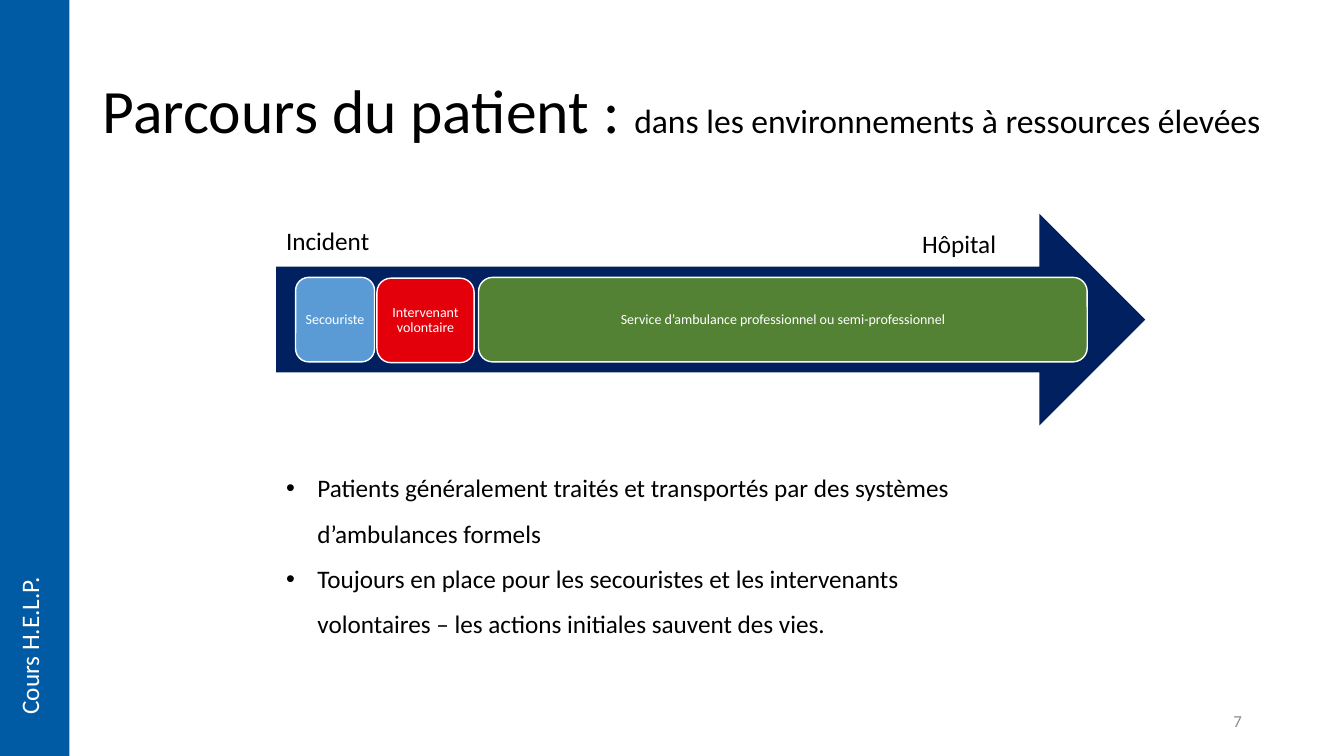
"""Build the slide on the patient pathway in high-resource settings."""
from pptx import Presentation
from pptx import util as u
from pptx.dml import color
from pptx.enum import shapes, text
from pptx.oxml import parse_xml
from pptx.oxml import ns


def add_block(kind, place, fill, line=None):
    block = page.shapes.add_shape(kind, *map(u.Cm, place))
    block.shadow.inherit = False
    block.fill.solid()
    block.fill.fore_color.rgb = color.RGBColor.from_string(fill)
    if line:
        block.line.color.rgb = color.RGBColor.from_string(line)
        block.line.width = u.Pt(1)
    else:
        block.line.fill.background()
    return block


def write(box, *paragraphs, size=18, ink="000000", align=text.PP_ALIGN.LEFT,
          anchor=text.MSO_ANCHOR.TOP, spacing=1.0, wrap=True, inset=None, bullet=False):
    frame = box.text_frame
    frame.word_wrap = wrap
    frame.vertical_anchor = anchor
    if inset is not None:
        frame.margin_left = frame.margin_right = u.Cm(inset)
        frame.margin_top = frame.margin_bottom = u.Cm(inset)
    for index, spans in enumerate(paragraphs):
        para = frame.add_paragraph() if index else frame.paragraphs[0]
        para.alignment = align
        para.line_spacing = spacing
        for words, points in ([(spans, size)] if isinstance(spans, str) else spans):
            span = para.add_run()
            span.text = words
            span.font.name = "Calibri"
            span.font.size = u.Pt(points)
            span.font.color.rgb = color.RGBColor.from_string(ink)
        if bullet:
            properties = para._p.get_or_add_pPr()
            properties.set("marL", str(u.Cm(0.79)))
            properties.set("indent", str(u.Cm(-0.79)))
            for mark in ('buFont {} typeface="Arial"', 'buChar {} char="•"'):
                properties.append(parse_xml(f"<a:{mark.format(ns.nsdecls('a'))}/>"))
    return frame


deck = Presentation()
deck.slide_width, deck.slide_height = u.Cm(33.87), u.Cm(19.05)
page = deck.slides.add_slide(deck.slide_layouts[6])
middle = text.MSO_ANCHOR.MIDDLE

add_block(shapes.MSO_SHAPE.RECTANGLE, (0, 0, 1.75, 19.05), "005BA4")
course = page.shapes.add_textbox(u.Cm(0.23), u.Cm(14.25), u.Cm(1.27), u.Cm(4.01))
course_frame = write(course, "Cours H.E.L.P.", ink="FFFFFF", wrap=False)
course_frame._txBody.bodyPr.set("vert", "vert270")

add_block(shapes.MSO_SHAPE.RIGHT_ARROW, (6.96, 5.39, 21.9, 5.33), "002060")
stages = [
    ("Secouriste", 7.45, 6.99, 1.99, "5B9BD5"),
    ("Intervenant volontaire", 9.5, 7.01, 2.45, "E3000B"),
    ("Service d’ambulance professionnel ou semi-professionnel", 12.06, 6.99, 15.34, "548235"),
]
for label, left, top, width, fill in stages:
    stage = add_block(shapes.MSO_SHAPE.ROUNDED_RECTANGLE, (left, top, width, 2.13), fill, "FFFFFF")
    write(stage, label, size=10, ink="FFFFFF", align=text.PP_ALIGN.CENTER,
          anchor=middle, spacing=0.9, inset=0.1)

title = [("Parcours du patient : ", 44), ("dans les environnements à ressources élevées", 24)]
points = [
    "Patients généralement traités et transportés par des systèmes d’ambulances formels",
    "Toujours en place pour les secouristes et les intervenants volontaires "
    "– les actions initiales sauvent des vies.",
]
captions = [
    ((2.34, 1.02, 30.71, 3.68), [title], dict(anchor=middle, spacing=0.9)),
    ((6.96, 5.64, 4.57, 1.63), ["Incident"], dict(spacing=0.9)),
    ((22.99, 5.64, 4.32, 1.02), ["Hôpital"], {}),
    ((6.96, 11.4, 18.8, 4.75), points, dict(spacing=1.5, bullet=True)),
    ((23.93, 17.65, 7.62, 1.02), ["7"],
     dict(size=12, ink="8C8C8C", align=text.PP_ALIGN.RIGHT, anchor=middle)),
]
for place, paragraphs, style in captions:
    write(page.shapes.add_textbox(*map(u.Cm, place)), *paragraphs, **style)

deck.save("out.pptx")
